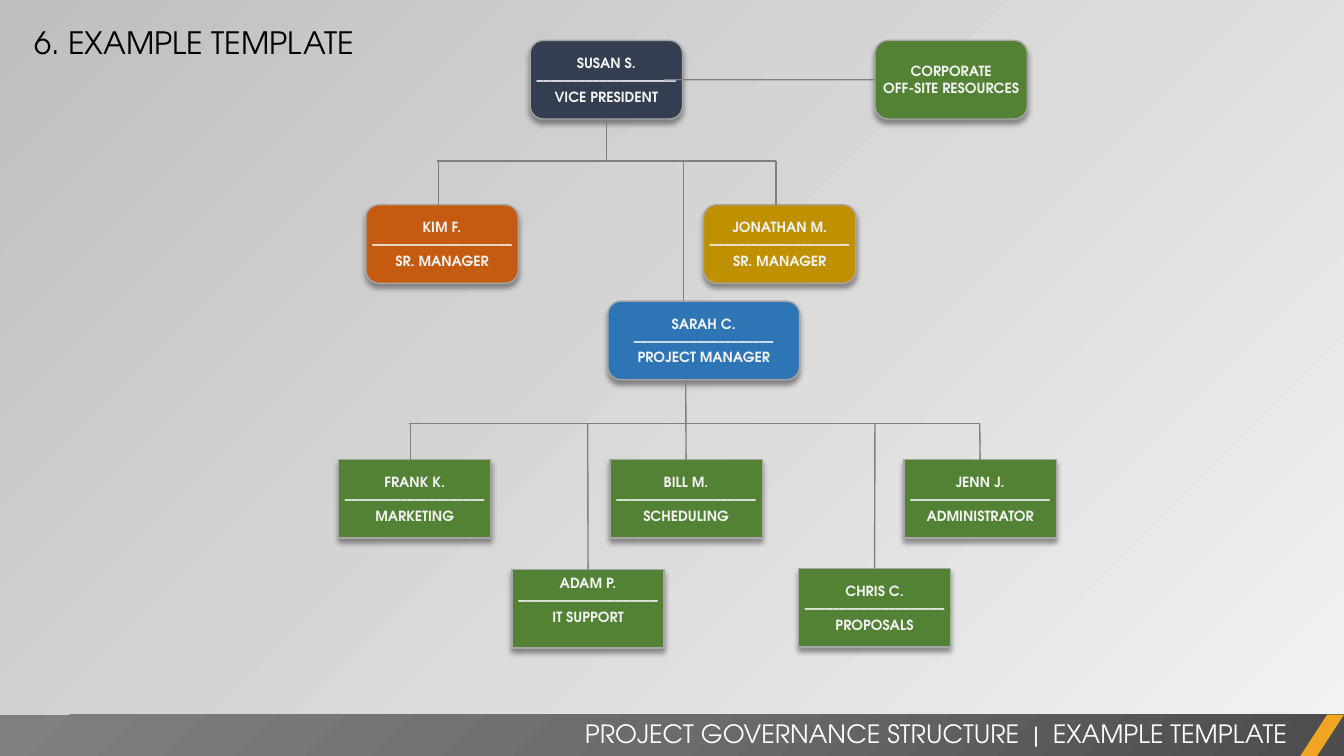
import pptx
import pptx.util
import pptx.oxml
import pptx.oxml.ns
import pptx.dml.color
import pptx.enum.shapes
import pptx.enum.text

Cm, Pt = pptx.util.Cm, pptx.util.Pt
SHAPE = pptx.enum.shapes.MSO_SHAPE
ALIGN = pptx.enum.text.PP_ALIGN
ANCHOR = pptx.enum.text.MSO_ANCHOR
NS = pptx.oxml.ns.nsdecls("a")

COLORS = {
    "navy": "333F50", "orange": "C55A11", "gold": "BF9000", "blue": "2E75B6",
    "green": "548235", "border": "A6A6A6", "line": "808080", "amber": "F0A622",
    "light": "F2F2F2", "silver": "BFBFBF", "white": "FFFFFF", "black": "000000",
    "bar_dark": "4C4C4C", "bar_mid": "6B6B6B",
}
RULE = "–" * 20
BOX_W, BOX_H = 3.84, 1.98
MANAGER_BAR_Y, TEAM_BAR_Y = 4.06, 10.67


def rgb(name):
    return pptx.dml.color.RGBColor.from_string(COLORS[name])


class OrgChart:
    """Holds the font and current slide; all lengths are centimetres."""

    font = "TeX Gyre Adventor"

    def __init__(self, slide):
        self.s = slide

    def style(self, tf, size, color, align, bold=False):
        for p in tf.paragraphs:
            p.alignment = align
            p.font.name = self.font
            p.font.size = Pt(size)
            p.font.bold = bold
            p.font.color.rgb = rgb(color)

    def background(self, start, end):
        fill = self.s.background.fill
        fill.gradient()
        fill.gradient_angle = 135
        for stop, color in zip(fill.gradient_stops, (start, end)):
            stop.color.rgb = rgb(color)

    def label(self, sp, text, left, top, width, height, size, color, align):
        sp.left, sp.top, sp.width, sp.height = map(Cm, (left, top, width, height))
        tf = sp.text_frame
        tf.text = text
        tf.word_wrap = True
        tf.auto_size = pptx.enum.text.MSO_AUTO_SIZE.SHAPE_TO_FIT_TEXT
        tf.vertical_anchor = ANCHOR.TOP
        self.style(tf, size, color, align)

    def title(self, text, *frame):
        self.label(self.s.shapes.title, text, *frame, 22, "black", ALIGN.LEFT)

    def footer(self, text, *frame):
        sp = self.s.shapes.add_textbox(0, 0, Cm(1), Cm(1))
        self.label(sp, text, *frame, 18, "white", ALIGN.RIGHT)

    def shape(self, kind, left, top, width, height, color):
        sp = self.s.shapes.add_shape(kind, Cm(left), Cm(top), Cm(width), Cm(height))
        sp.shadow.inherit = False
        sp.fill.solid()
        sp.fill.fore_color.rgb = rgb(color)
        sp.line.fill.background()
        return sp

    def footer_bar(self, *frame):
        """Draw a bar whose gradient radiates from its lower right corner."""
        sp = self.shape(SHAPE.RECTANGLE, *frame, "line")
        stops = "".join(
            f'<a:gs pos="{pos}"><a:srgbClr val="{COLORS[c]}"/></a:gs>'
            for pos, c in ((0, "bar_dark"), (50000, "bar_mid"), (100000, "line")))
        grad = pptx.oxml.parse_xml(
            f'<a:gradFill {NS}><a:gsLst>{stops}</a:gsLst><a:path path="circle">'
            '<a:fillToRect l="100000" t="100000"/></a:path></a:gradFill>')
        sp_pr = sp._element.spPr
        sp_pr.replace(sp_pr.find(pptx.oxml.ns.qn("a:solidFill")), grad)

    def box(self, text, left, top, color, kind=SHAPE.RECTANGLE, width=BOX_W, bottom=0.05):
        sp = self.shape(kind, left, top, width, BOX_H, color)
        sp.line.color.rgb = rgb("border")
        sp.line.width = Pt(1)
        effects = sp._element.spPr.find(pptx.oxml.ns.qn("a:effectLst"))
        effects.append(pptx.oxml.parse_xml(
            f'<a:outerShdw {NS} blurRad="50800" dist="38100" dir="5400000">'
            '<a:srgbClr val="000000"><a:alpha val="40000"/></a:srgbClr></a:outerShdw>'))
        tf = sp.text_frame
        tf.text = text
        tf.word_wrap = True
        tf.vertical_anchor = ANCHOR.MIDDLE
        tf.margin_left = tf.margin_right = tf.margin_top = Cm(0.05)
        tf.margin_bottom = Cm(bottom)
        self.style(tf, 10, "light", ALIGN.CENTER, bold=True)
        return sp

    def line(self, x1, y1, x2, y2):
        cx = self.s.shapes.add_connector(
            pptx.enum.shapes.MSO_CONNECTOR.STRAIGHT, Cm(x1), Cm(y1), Cm(x2), Cm(y2))
        cx.line.color.rgb = rgb("line")
        cx.line.width = Pt(1)
        cx._element.spPr.append(pptx.oxml.parse_xml(f"<a:effectLst {NS}/>"))
        return cx

    def drop(self, x, y, sp):
        """Run a line down to the box, joined to it when x is at its centre."""
        cx = self.line(x, y, x, sp.top.cm)
        if abs(sp.left.cm + sp.width.cm / 2 - x) < 0.05:
            cx.end_connect(sp, 0)


def main():
    prs = pptx.Presentation()
    prs.slide_width, prs.slide_height = Cm(33.87), Cm(19.05)
    chart = OrgChart(prs.slides.add_slide(prs.slide_layouts[5]))
    chart.background("light", "silver")
    chart.title("6. EXAMPLE TEMPLATE", 0.61, 0.48, 16.94, 1.19)
    chart.footer_bar(0, 18.01, 33.87, 1.04)
    accent = chart.shape(SHAPE.PARALLELOGRAM, 32.77, 18.01, 1.1, 1.04, "amber")
    accent.adjustments[0] = 0.65
    chart.footer("PROJECT GOVERNANCE STRUCTURE  |  EXAMPLE TEMPLATE", 13.34, 17.98, 19.35, 1.02)

    rounded = SHAPE.FLOWCHART_ALTERNATE_PROCESS
    susan = chart.box(f"SUSAN S.\n{RULE}\nVICE PRESIDENT", 13.36, 1.02, "navy", rounded)
    corporate = chart.box("CORPORATE\vOFF-SITE RESOURCES", 22.05, 1.02, "green", rounded)
    chart.line(16.74, 2.01, 22.05, 2.01).end_connect(corporate, 1)
    chart.line(15.28, 3, 15.28, MANAGER_BAR_Y).begin_connect(susan, 2)

    # name, role, left, top, colour, width, line x
    managers = [
        ("KIM F.", "SR. MANAGER", 9.22, 5.16, "orange", BOX_W, 11.05),
        ("JONATHAN M.", "SR. MANAGER", 17.73, 5.16, "gold", BOX_W, 19.56),
        ("SARAH C.", "PROJECT MANAGER", 15.32, 7.59, "blue", 4.83, 17.22),
    ]
    chart.line(11.02, MANAGER_BAR_Y, 19.56, MANAGER_BAR_Y)
    for name, role, left, top, color, width, x in managers:
        sp = chart.box(f"{name}\n{RULE}\n{role}", left, top, color, rounded, width)
        chart.drop(x, MANAGER_BAR_Y, sp)
    sarah_bottom = 7.59 + BOX_H

    # name, role, left, top, line x, line start, bottom inset
    team = [
        ("FRANK K.", "MARKETING", 8.53, 11.58, 10.34, TEAM_BAR_Y, 0.05),
        ("BILL M.", "SCHEDULING", 15.37, 11.58, 17.28, sarah_bottom, 0.05),
        ("JENN J.", "ADMINISTRATOR", 22.78, 11.58, 24.69, TEAM_BAR_Y, 0.05),
        ("ADAM P.", "IT SUPPORT", 12.9, 14.35, 14.81, TEAM_BAR_Y, 0.48),
        ("CHRIS C.", "PROPOSALS", 20.12, 14.33, 22.05, TEAM_BAR_Y, 0.05),
    ]
    chart.line(10.31, TEAM_BAR_Y, 24.69, TEAM_BAR_Y)
    for name, role, left, top, x, start, bottom in team:
        sp = chart.box(f"{name}\n{RULE}\n{role}", left, top, "green", bottom=bottom)
        chart.drop(x, start, sp)

    prs.save("out.pptx")


if __name__ == "__main__":
    main()
